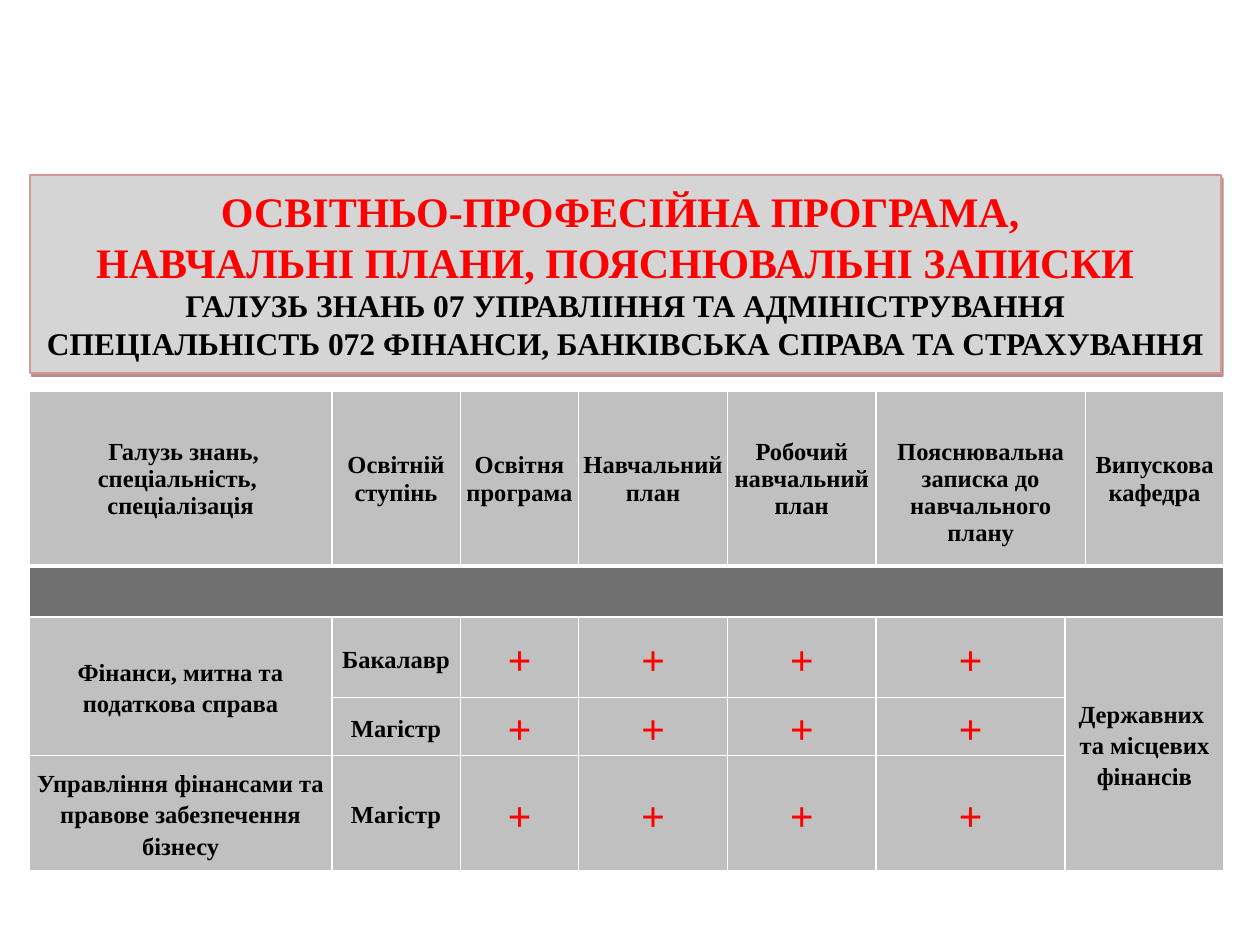
import pptx
import pptx.dml.color
import pptx.enum.shapes
import pptx.enum.text
import pptx.oxml
import pptx.oxml.ns
import pptx.util
from lxml import etree

Pt = pptx.util.Pt
FONT = "Times New Roman"
COLORS = {
    "panel": "D5D5D5", "panel_line": "D99594", "panel_shadow": "622423",
    "cell": "C0C0C0", "band": "707070", "border": "FFFFFF",
    "accent": "FF0000", "text": "000000",
}
TITLE_LINES = [
    ("ОСВІТНЬО-ПРОФЕСІЙНА ПРОГРАМА, ", 24, "accent"),
    ("НАВЧАЛЬНІ ПЛАНИ, ПОЯСНЮВАЛЬНІ ЗАПИСКИ  ", 24, "accent"),
    ("ГАЛУЗЬ ЗНАНЬ 07 УПРАВЛІННЯ ТА АДМІНІСТРУВАННЯ", 18, "text"),
    ("СПЕЦІАЛЬНІСТЬ 072 ФІНАНСИ, БАНКІВСЬКА СПРАВА ТА СТРАХУВАННЯ", 18, "text"),
]
COLUMN_WIDTHS = [172.8, 73.44, 67.68, 85, 85, 108, 11.52, 79.2]
ROW_HEIGHTS = [100, 28.8, 46, 33.2, 65.5]
PLUSES = ["+"] * 4
TABLE_ROWS = [
    [" Галузь знань,\nспеціальність, \nспеціалізація", "Освітній ступінь",
     "Освітня програма", "Навчальний план", "Робочий навчальний план",
     "Пояснювальна записка до навчального плану", "", "Випускова кафедра"],
    [],
    ["Фінанси, митна та податкова справа", "Бакалавр", *PLUSES,
     "Державних \nта місцевих фінансів"],
    ["", "Магістр", *PLUSES],
    ["Управління фінансами та правове забезпечення бізнесу", "Магістр", *PLUSES],
]
# First and last cell (row, column) of each merged area
MERGES = [((0, 5), (0, 6)), ((1, 0), (1, 7)), ((2, 0), (3, 0)), ((2, 6), (4, 7))]


def rgb(name):
    return pptx.dml.color.RGBColor.from_string(COLORS[name])


def format_paragraph(para, size, color, spacing=None):
    para.alignment = pptx.enum.text.PP_ALIGN.CENTER
    if spacing:
        para.line_spacing = spacing
    for span in para.runs:
        span.font.name = FONT
        span.font.size = Pt(size)
        span.font.bold = True
        span.font.color.rgb = rgb(color)


def add_hard_shadow(shape):
    shape.shadow.inherit = False
    effects = shape._element.spPr.find(pptx.oxml.ns.qn("a:effectLst"))
    effects.append(pptx.oxml.parse_xml(
        f'<a:outerShdw {pptx.oxml.ns.nsdecls("a")} blurRad="0" dist="{Pt(2.2)}" '
        f'dir="{63 * 60000}" algn="ctr" rotWithShape="0">'
        f'<a:srgbClr val="{COLORS["panel_shadow"]}"><a:alpha val="50000"/></a:srgbClr>'
        '</a:outerShdw>'))


def set_borders(cell, top, bottom):
    properties = cell._tc.get_or_add_tcPr()
    for side, width in (("L", 1), ("R", 1), ("T", top), ("B", bottom)):
        line = etree.SubElement(properties, pptx.oxml.ns.qn(f"a:ln{side}"), w=str(Pt(width)))
        fill = etree.SubElement(line, pptx.oxml.ns.qn("a:solidFill"))
        etree.SubElement(fill, pptx.oxml.ns.qn("a:srgbClr"), val=COLORS["border"])


def add_title_panel(page, left, top, width, height):
    panel = page.shapes.add_shape(
        pptx.enum.shapes.MSO_SHAPE.RECTANGLE, Pt(left), Pt(top), Pt(width), Pt(height))
    panel.fill.solid()
    panel.fill.fore_color.rgb = rgb("panel")
    panel.line.color.rgb = rgb("panel_line")
    panel.line.width = Pt(1)
    add_hard_shadow(panel)

    frame = panel.text_frame
    frame.word_wrap = True
    frame.vertical_anchor = pptx.enum.text.MSO_ANCHOR.MIDDLE
    frame.margin_left = frame.margin_right = Pt(7.9)
    frame.margin_top = frame.margin_bottom = Pt(4)
    frame.text = "\n".join(text for text, _, _ in TITLE_LINES)
    for para, (_, size, color) in zip(frame.paragraphs, TITLE_LINES):
        format_paragraph(para, size, color)


def fill_cell(cell, text, in_header):
    cell.vertical_anchor = pptx.enum.text.MSO_ANCHOR.MIDDLE
    cell.margin_left = cell.margin_right = Pt(2.5)
    cell.margin_top, cell.margin_bottom = Pt(0.7), Pt(0)
    cell.text_frame.text = text
    size, color = (24, "accent") if text == "+" else (14, "text")
    for para in cell.text_frame.paragraphs:
        format_paragraph(para, size, color, None if in_header else 1.15)


def add_plan_table(page, left, top):
    table = page.shapes.add_table(
        len(ROW_HEIGHTS), len(COLUMN_WIDTHS), Pt(left), Pt(top),
        Pt(sum(COLUMN_WIDTHS)), Pt(sum(ROW_HEIGHTS))).table
    for column, width in zip(table.columns, COLUMN_WIDTHS):
        column.width = Pt(width)
    for row, height in zip(table.rows, ROW_HEIGHTS):
        row.height = Pt(height)

    # Borders and fills, with a thick rule under the header
    for row_index, row in enumerate(table.rows):
        for cell in row.cells:
            set_borders(cell, 3 if row_index == 1 else 1, 3 if row_index == 0 else 1)
            cell.fill.solid()
            cell.fill.fore_color.rgb = rgb("band" if row_index == 1 else "cell")

    for first, last in MERGES:
        table.cell(*first).merge(table.cell(*last))

    for row_index, texts in enumerate(TABLE_ROWS):
        for column_index, text in enumerate(texts):
            if text:
                fill_cell(table.cell(row_index, column_index), text, row_index == 0)
    # The explanatory note heading sits lower than its neighbours
    table.cell(0, 5).margin_top = Pt(16.5)


def main():
    deck = pptx.Presentation()
    deck.slide_width, deck.slide_height = Pt(720), Pt(540)
    page = deck.slides.add_slide(deck.slide_layouts[6])
    add_plan_table(page, 16.8, 223.5)
    add_title_panel(page, 17.2, 100, 680.5, 113)
    deck.save("out.pptx")


if __name__ == "__main__":
    main()
